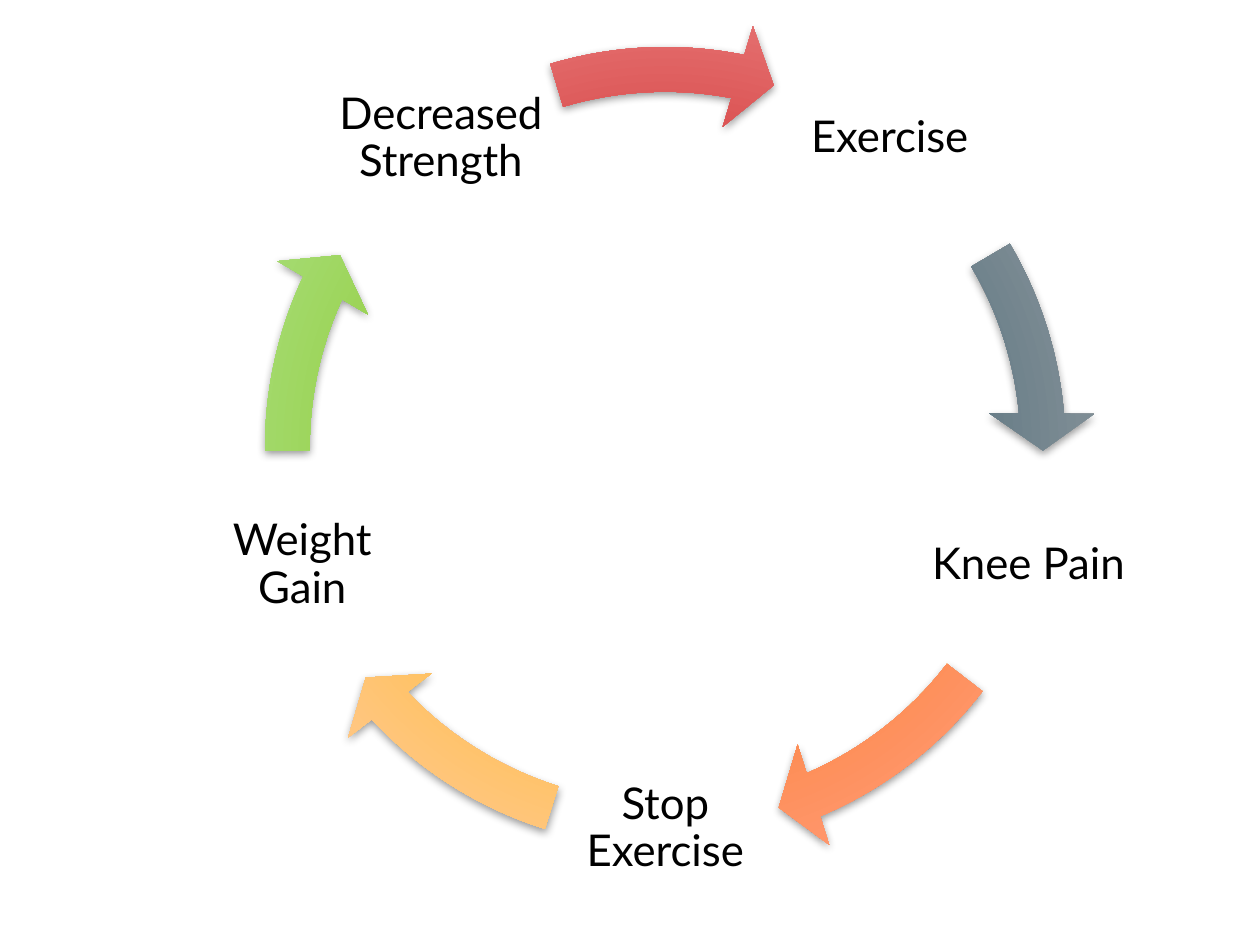
import math
from pptx import Presentation, dml, oxml, util as u
from pptx.dml import color
from pptx.enum import shapes, text
from pptx.oxml import ns

deck = Presentation()
deck.slide_width, deck.slide_height = u.Inches(10), u.Inches(7.5)
wide = deck.slide_width
slide = deck.slides.add_slide(deck.slide_layouts[6])
group = slide.shapes.add_group_shape()


def paint(hue):
    return color.RGBColor.from_string(hue)


def glow(shape, stops):
    marks = "".join(
        f'<a:gs pos="{pos}"><a:srgbClr val="{paint(hue)}"/></a:gs>'
        for pos, hue in zip((0, 69000, 100000), stops))
    grad = oxml.parse_xml(
        f'<a:gradFill rotWithShape="1" {ns.nsdecls("a")}><a:gsLst>{marks}</a:gsLst>'
        '<a:path path="circle"><a:fillToRect l="100000" t="100000" r="100000" b="100000"/>'
        '</a:path></a:gradFill>')
    shade = oxml.parse_xml(
        f'<a:outerShdw {ns.nsdecls("a")} blurRad="{u.Pt(5)}" dist="{u.Pt(2)}" dir="5400000" '
        'rotWithShape="0"><a:srgbClr val="000000"><a:alpha val="40000"/></a:srgbClr></a:outerShdw>')
    shape.fill.solid()
    shape.line.fill.background()
    shape.shadow.inherit = False
    props = shape.element.spPr
    props.replace(props.find(ns.qn("a:solidFill")), grad)
    props.find(ns.qn("a:effectLst")).append(shade)


steps = [
    ("Exercise", (212.927, 197.667), ("1F4C5D", "7D8C94", "BCC2C5")),
    ("Knee Pain", (40.141, 22.539), ("F67309", "FF9569", "FEC3B0")),
    ("Stop Exercise", (82.1, 64.498), ("FFB400", "FFC67F", "FFDEBD")),
    ("Weight Gain", (122.972, 107.713), ("80BC00", "A3DA6D", "CBE7B4")),
    ("Decreased Strength", (168.651, 151.988), ("C00000", "E36B6B", "ECB3B3")),
]
mid_x, mid_y = 0.53 * wide, 0.36 * wide
mid_x, mid_y = mid_x - 0.002 * wide, mid_y - 0.005 * wide
reach, box, ring = 0.303 * wide, 0.182 * wide, 0.683 * wide
pad = u.Inches(0.03)
frame_look = {"word_wrap": True, "vertical_anchor": text.MSO_ANCHOR.MIDDLE,
              "margin_left": pad, "margin_right": pad,
              "margin_top": pad, "margin_bottom": pad}
para_look = {"alignment": text.PP_ALIGN.CENTER, "line_spacing": 0.9,
             "space_after": u.Pt(8.75)}
font_look = {"name": "Lato", "size": u.Pt(25)}

for step, (label, (end, start), stops) in enumerate(steps):
    turn = math.radians(72 * step - 54)
    left = mid_x + reach * math.cos(turn) - box / 2
    top = mid_y + reach * math.sin(turn) - box / 2
    note = group.shapes.add_textbox(int(left), int(top), int(box), int(box))
    frame = note.text_frame
    para = frame.paragraphs[0]
    run = para.add_run()
    run.text = label
    for item, look in ((frame, frame_look), (para, para_look), (run.font, font_look)):
        for key, value in look.items():
            setattr(item, key, value)
    run.font.color.rgb = paint("000000")

    arrow = group.shapes.add_shape(
        shapes.MSO_SHAPE.CIRCULAR_ARROW, int(mid_x - ring / 2),
        int(mid_y - ring / 2), int(ring), int(ring))
    for spot, value in enumerate((0.052, 3.36, end, start, 0.061)):
        arrow.adjustments[spot] = value
    glow(arrow, stops)

deck.save("out.pptx")
